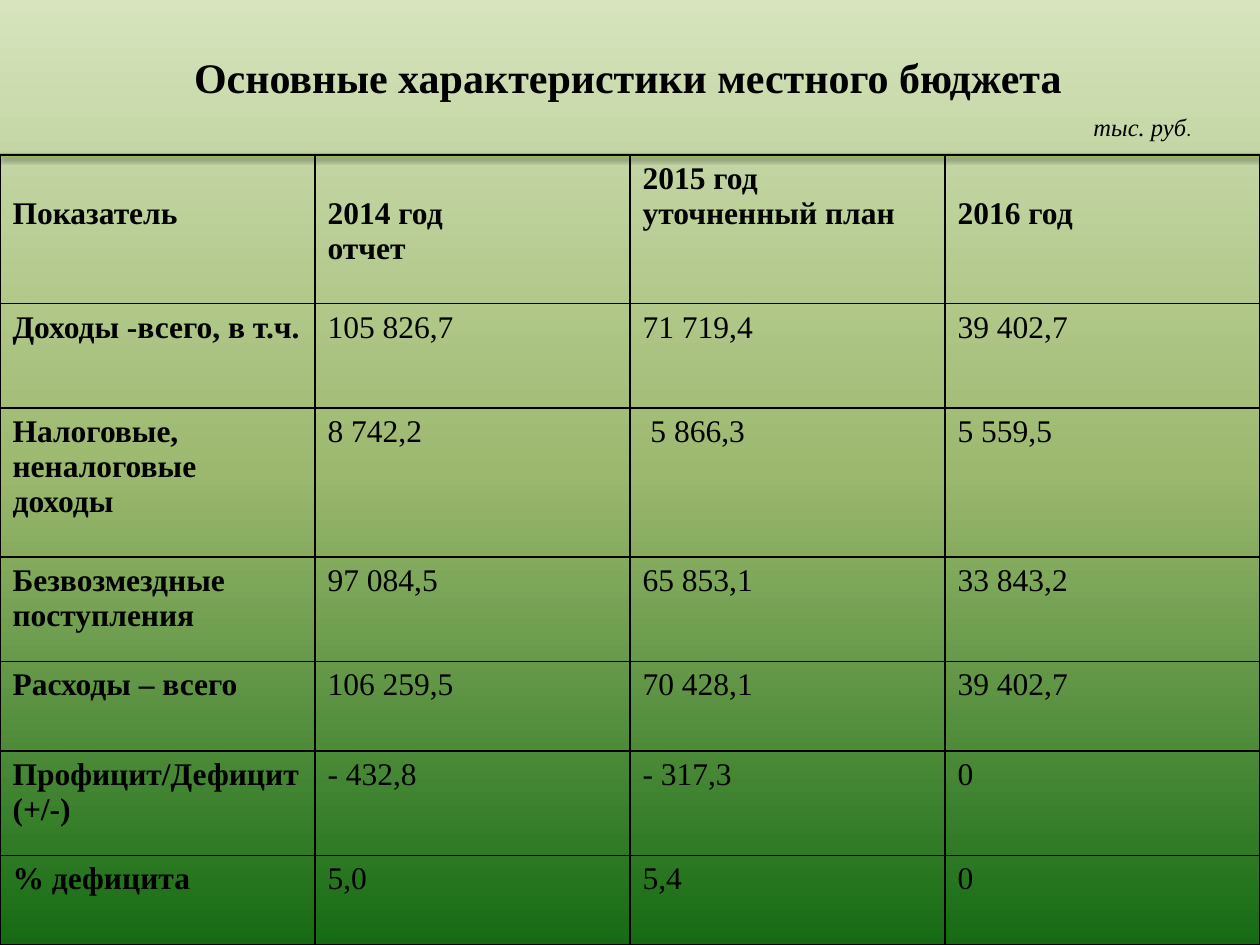
from copy import deepcopy
from typing import NamedTuple

from lxml import etree
from pptx import Presentation
from pptx.dml.color import RGBColor
from pptx.enum.shapes import MSO_CONNECTOR
from pptx.enum.text import MSO_ANCHOR, PP_ALIGN
from pptx.oxml.ns import qn
from pptx.util import Inches, Pt

TOP, LEFT = MSO_ANCHOR.TOP, PP_ALIGN.LEFT
STRAIGHT = MSO_CONNECTOR.STRAIGHT
SERIF, SANS = "Times New Roman", "Calibri"
COLORS = {"text": "000000", "grid": "000000", "rule": "9BBB59", "shade": "000000",
          "light": "D7E4BD", "mid": "9CB86E", "dark": "156B13"}
WIDTH, HEIGHT, TABLE_TOP = 10, 7.5, 1.23


class Row(NamedTuple):
    height: float
    label: str
    values: tuple[str, str, str]


HEAD = Row(1.18, "Показатель", ("2014 год\nотчет", "2015 год уточненный план", "2016 год"))
ROWS = [
    HEAD,
    Row(0.83, "Доходы -всего, в т.ч.", ("105 826,7", "71 719,4", "39 402,7")),
    Row(1.18, "Налоговые, неналоговые доходы", ("8 742,2", " 5 866,3", "5 559,5")),
    Row(0.83, "Безвозмездные поступления", ("97 084,5", "65 853,1", "33 843,2")),
    Row(0.71, "Расходы – всего", ("106 259,5", "70 428,1", "39 402,7")),
    Row(0.83, "Профицит/Дефицит (+/-)", ("- 432,8", "- 317,3", "0")),
    Row(0.71, "% дефицита", ("5,0", "5,4", "0")),
]


def color(name: str) -> RGBColor:
    return RGBColor.from_string(COLORS[name])


def add_text(par, text: str, size: float = 18, font: str = SERIF,
             bold: bool = False, italic: bool = False) -> None:
    par.alignment = LEFT
    run = par.add_run()
    run.text = text
    run.font.size, run.font.name = Pt(size), font
    run.font.bold, run.font.italic = bold, italic
    run.font.color.rgb = color("text")


def add_node(parent, tag: str, **attrs):
    return etree.SubElement(parent, qn(tag), {k: str(v) for k, v in attrs.items()})


def paint_back(slide) -> None:
    fill = slide.background.fill
    fill.gradient()
    fill.gradient_angle = 270
    stops = slide.element.find(".//" + qn("a:gsLst"))
    stops.insert(1, deepcopy(stops[0]))
    for stop, name, place in zip(fill.gradient_stops, ("light", "mid", "dark"), (0, 0.5, 1)):
        stop.color.rgb = color(name)
        stop.position = place


def add_rule(slide) -> None:
    rule = slide.shapes.add_connector(STRAIGHT, Inches(WIDTH), Inches(TABLE_TOP),
                                      0, Inches(TABLE_TOP))
    rule.line.color.rgb = color("rule")
    rule.line.width = Pt(2)
    effects = add_node(rule._element.spPr, "a:effectLst")
    shade = add_node(effects, "a:outerShdw", blurRad=Pt(3.1), dist=Pt(1.6),
                     dir=5400000, rotWithShape=0)
    tint = add_node(shade, "a:srgbClr", val=COLORS["shade"])
    add_node(tint, "a:alpha", val=38000)


def add_borders(cell) -> None:
    props = cell._tc.get_or_add_tcPr()
    for place, side in enumerate(("a:lnL", "a:lnR", "a:lnT", "a:lnB")):
        line = add_node(props, side, w=Pt(1))
        add_node(add_node(line, "a:solidFill"), "a:srgbClr", val=COLORS["grid"])
        props.insert(place, line)


def add_grid(slide, rows: list[Row]) -> None:
    frame = slide.shapes.add_table(len(rows), 4, 0, Inches(TABLE_TOP), Inches(WIDTH),
                                   Inches(HEIGHT - TABLE_TOP))
    table = frame.table
    table.first_row = table.horz_banding = False
    for r, row in enumerate(rows):
        table.rows[r].height = Inches(row.height)
        for c, text in enumerate((row.label, *row.values)):
            cell = table.cell(r, c)
            cell.fill.background()
            add_borders(cell)
            # Short headings start one line lower
            if row is HEAD and c != 2:
                cell.margin_top = Inches(0.33)
            for i, part in enumerate(text.split("\n")):
                pars = cell.text_frame
                par = pars.paragraphs[0] if i == 0 else pars.add_paragraph()
                add_text(par, part, bold=row is HEAD or c == 0)


def main() -> None:
    deck = Presentation()
    deck.slide_width, deck.slide_height = Inches(WIDTH), Inches(HEIGHT)
    slide = deck.slides.add_slide(deck.slide_layouts[5])
    paint_back(slide)
    add_rule(slide)

    # Title
    title = slide.shapes.title
    title.left, title.top = Inches(1.44), Inches(0.36)
    title.width, title.height = Inches(7.24), Inches(0.5)
    title.text_frame.vertical_anchor = TOP
    title.text_frame.word_wrap = False
    add_text(title.text_frame.paragraphs[0], "Основные характеристики местного бюджета",
             size=24, bold=True)

    # Budget table
    add_grid(slide, ROWS)

    # Unit of measure
    unit = slide.shapes.add_textbox(Inches(8.58), Inches(0.84), Inches(1.42), Inches(0.39))
    unit.text_frame.word_wrap = True
    par = unit.text_frame.paragraphs[0]
    add_text(par, "тыс. руб", size=14, italic=True)
    add_text(par, ".", size=11, font=SANS)

    deck.save("out.pptx")


if __name__ == "__main__":
    main()
